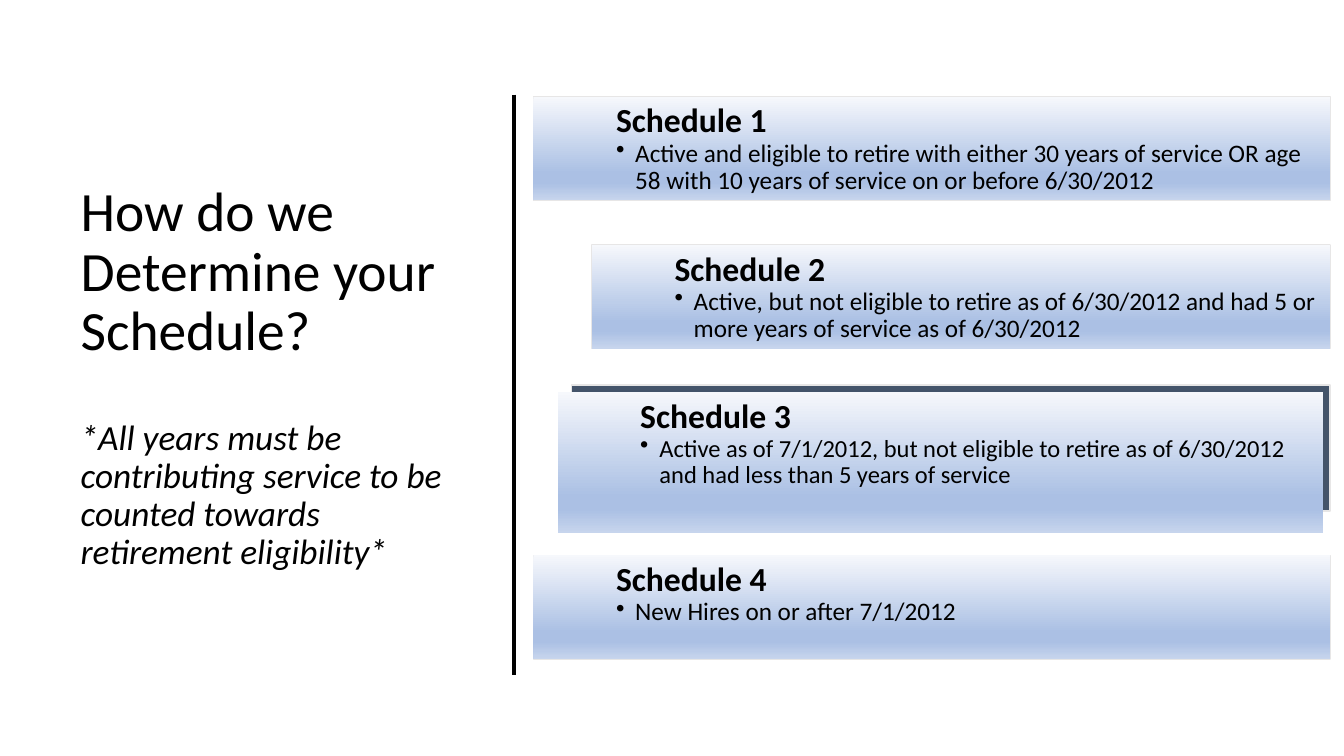
from lxml import etree
from pptx import Presentation
from pptx.dml.color import RGBColor
from pptx.enum.shapes import MSO_CONNECTOR, MSO_SHAPE
from pptx.enum.text import MSO_ANCHOR, MSO_AUTO_SIZE, PP_ALIGN
from pptx.oxml.ns import qn
from pptx.util import Inches, Pt

RECTANGLE = MSO_SHAPE.RECTANGLE
STRAIGHT = MSO_CONNECTOR.STRAIGHT
LEFT = PP_ALIGN.LEFT
TOP, MIDDLE = MSO_ANCHOR.TOP, MSO_ANCHOR.MIDDLE
NO_AUTOFIT = MSO_AUTO_SIZE.NONE

FONT = "Calibri"
TITLE_ONLY_LAYOUT = 5
COLORS = {
    "text": "000000",
    "backing": "44546A",
    "border": "E7E6E6",
    "card_top": "F6F8FC",
    "card_middle": "ABC0E4",
    "card_bottom": "C7D5ED",
}
CARD_STOPS = [(0, "card_top"), (74, "card_middle"), (83, "card_middle"), (100, "card_bottom")]

# Heading, detail, detail size, backing box, backing has gradient, card box
REGULAR_1 = (5.29, 0.96, 7.9, 1.03)
REGULAR_2 = (5.87, 2.43, 7.32, 1.03)
REGULAR_4 = (5.29, 5.51, 7.9, 1.03)
SCHEDULES = [
    ("Schedule 1",
     "Active and eligible to retire with either 30 years of service OR age 58 "
     "with 10 years of service on or before 6/30/2012",
     18, REGULAR_1, False, REGULAR_1),
    ("Schedule 2",
     "Active, but not eligible to retire as of 6/30/2012 and had 5 or more years "
     "of service as of 6/30/2012",
     18, REGULAR_2, False, REGULAR_2),
    ("Schedule 3",
     "Active as of 7/1/2012, but not eligible to retire as of 6/30/2012 and had "
     "less than 5 years of service",
     17.5, (5.67, 3.82, 7.52, 1.25), False, (5.53, 3.89, 7.59, 1.4)),
    ("Schedule 4", "New Hires on or after 7/1/2012", 18, REGULAR_4, True, REGULAR_4),
]


def color(name):
    return RGBColor.from_string(COLORS[name])


def format_paragraph(paragraph, size, bold=False, italic=False):
    paragraph.alignment = LEFT
    paragraph.line_spacing = 0.9
    for run in paragraph.runs:
        run.font.name = FONT
        run.font.size = Pt(size)
        run.font.bold = bold
        run.font.italic = italic
        run.font.color.rgb = color("text")


def add_bullet(paragraph, indent):
    properties = paragraph._p.get_or_add_pPr()
    properties.set("marL", str(indent))
    properties.set("indent", str(-indent))
    etree.SubElement(properties, qn("a:buChar"), char="•")


def fill_card_gradient(shape):
    shape.fill.gradient()
    shape.fill.gradient_angle = 270
    stops = shape._element.spPr.find(qn("a:gradFill")).find(qn("a:gsLst"))
    for stop in list(stops):
        stops.remove(stop)
    for percent, name in CARD_STOPS:
        stop = etree.SubElement(stops, qn("a:gs"), pos=str(percent * 1000))
        etree.SubElement(stop, qn("a:srgbClr"), val=COLORS[name])


def add_rectangle(slide, box, gradient, border):
    shape = slide.shapes.add_shape(RECTANGLE, *map(Inches, box))
    shape.shadow.inherit = False
    if gradient:
        fill_card_gradient(shape)
    else:
        shape.fill.solid()
        shape.fill.fore_color.rgb = color("backing")
    if border:
        shape.line.color.rgb = color("border")
        shape.line.width = Pt(1)
    else:
        shape.line.fill.background()
    return shape


def add_schedule(slide, heading, detail, detail_size, backing_box, backing_gradient, card_box):
    add_rectangle(slide, backing_box, backing_gradient, border=True)
    card = add_rectangle(slide, card_box, gradient=True, border=False)
    frame = card.text_frame
    frame.word_wrap = True
    frame.vertical_anchor = TOP
    frame.margin_left = Inches(0.82)
    frame.margin_top = frame.margin_right = frame.margin_bottom = Inches(0.07)
    frame.text = f"{heading}\n{detail}"
    heading_paragraph, detail_paragraph = frame.paragraphs
    format_paragraph(heading_paragraph, 24, bold=True)
    format_paragraph(detail_paragraph, detail_size)
    for paragraph in frame.paragraphs:
        paragraph.space_after = Pt(0.3)
    detail_paragraph.level = 1
    add_bullet(detail_paragraph, Inches(0.19))


def set_title(slide, question, note):
    title = slide.shapes.title
    title.left, title.top, title.width, title.height = map(Inches, (0.7, 2.21, 4, 3.08))
    frame = title.text_frame
    frame.word_wrap = True
    frame.auto_size = NO_AUTOFIT
    frame.vertical_anchor = MIDDLE
    frame.text = f"{question}\n{note}"
    question_paragraph, note_paragraph = frame.paragraphs
    format_paragraph(question_paragraph, 39.6)
    format_paragraph(note_paragraph, 25.2, italic=True)
    note_paragraph.space_before = Pt(41)


def add_divider(slide, x, top, bottom):
    divider = slide.shapes.add_connector(
        STRAIGHT, Inches(x), Inches(top), Inches(x), Inches(bottom))
    divider.line.color.rgb = color("text")
    divider.line.width = Pt(3)
    etree.SubElement(divider._element.spPr, qn("a:effectLst"))


def main():
    presentation = Presentation()
    presentation.slide_width = Inches(13.33)
    presentation.slide_height = Inches(7.5)
    slide = presentation.slides.add_slide(presentation.slide_layouts[TITLE_ONLY_LAYOUT])

    # Question and note on the left
    set_title(
        slide,
        "How do we Determine your Schedule?",
        "*All years must be contributing service to be counted towards retirement eligibility*")

    # Schedule cards on the right
    for schedule in SCHEDULES:
        add_schedule(slide, *schedule)

    # Vertical divider
    add_divider(slide, 5.1, 0.94, 6.7)

    presentation.save("out.pptx")


if __name__ == "__main__":
    main()
